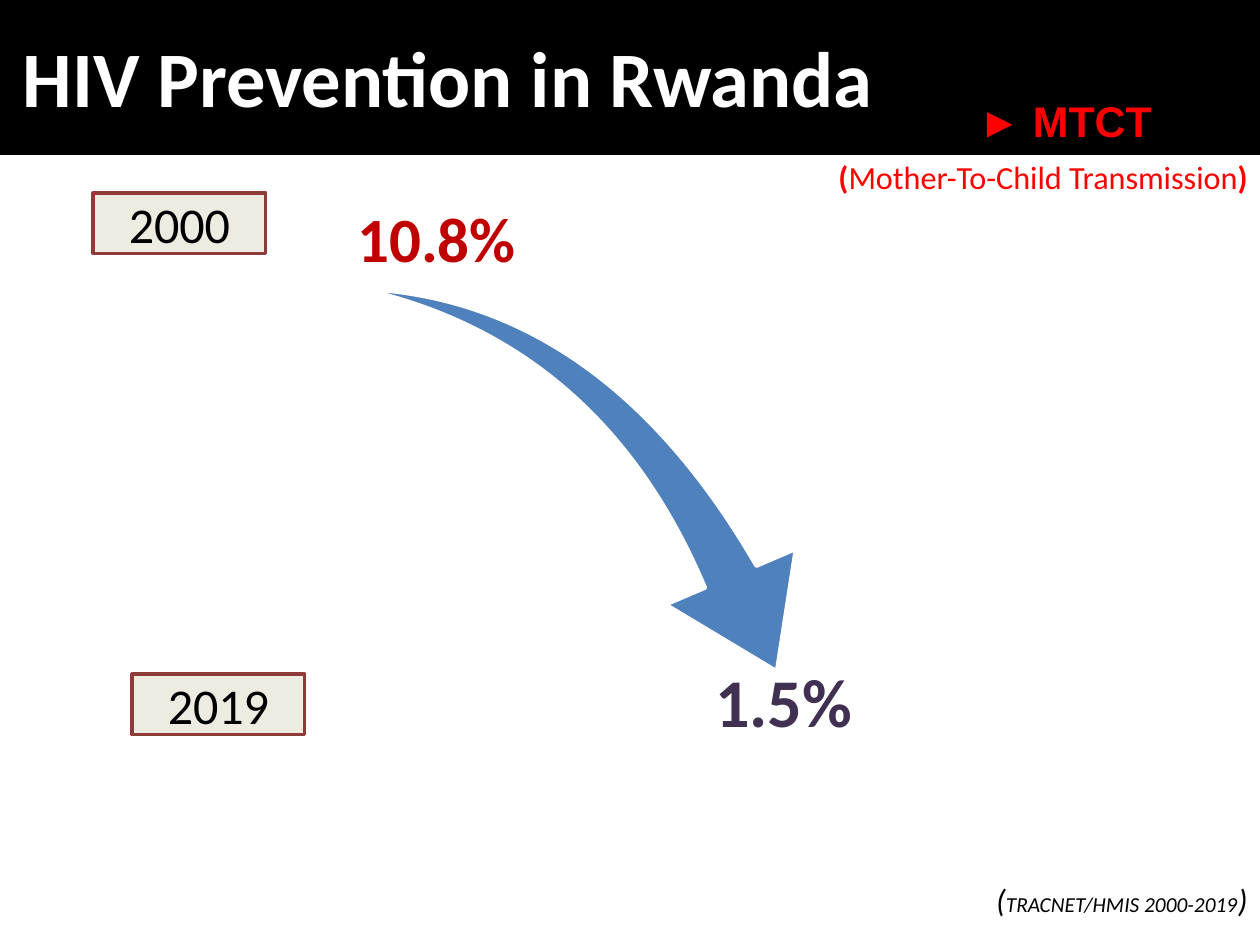
from pptx import Presentation
from pptx.dml.color import RGBColor
from pptx.enum.shapes import MSO_SHAPE
from pptx.enum.text import MSO_ANCHOR, MSO_AUTO_SIZE, PP_ALIGN
from pptx.util import Pt

BLACK = RGBColor(0x00, 0x00, 0x00)
WHITE = RGBColor(0xFF, 0xFF, 0xFF)
RED = RGBColor(0xFF, 0x00, 0x00)
DARK_RED = RGBColor(0xC0, 0x00, 0x00)
PURPLE = RGBColor(0x40, 0x31, 0x52)
BLUE = RGBColor(0x4F, 0x81, 0xBD)
TAN = RGBColor(0xEE, 0xEC, 0xE1)
MAROON = RGBColor(0x8E, 0x3B, 0x39)


def add_span(para, text, size, color=BLACK, font="Calibri", bold=False, italic=False):
    span = para.add_run()
    span.text = text
    span.font.name = font
    span.font.size = Pt(size)
    span.font.color.rgb = color
    span.font.bold = bold
    span.font.italic = italic


class SlideBuilder:
    def __init__(self, page):
        self.page = page

    def prepare(self, box, align, anchor, inset=None):
        """Set wrapping and placement of a box's text; return its first paragraph."""
        frame = box.text_frame
        frame.word_wrap = True
        frame.auto_size = MSO_AUTO_SIZE.NONE
        frame.vertical_anchor = anchor
        if inset is not None:
            frame.margin_left = frame.margin_right = Pt(inset)
            frame.margin_top = frame.margin_bottom = Pt(inset)
        para = frame.paragraphs[0]
        para.alignment = align
        return para

    def title(self, text, left, top, width, height):
        box = self.page.shapes.title
        box.left, box.top, box.width, box.height = map(Pt, (left, top, width, height))
        para = self.prepare(box, PP_ALIGN.LEFT, MSO_ANCHOR.TOP)
        add_span(para, text, 44.9, WHITE, bold=True)

    def text(self, left, top, width, height, spans, align=PP_ALIGN.LEFT,
             anchor=MSO_ANCHOR.TOP, inset=None, spacing=None):
        """Add a one-paragraph text box; spans are (text, format) pairs."""
        box = self.page.shapes.add_textbox(*map(Pt, (left, top, width, height)))
        para = self.prepare(box, align, anchor, inset)
        para.line_spacing = spacing
        for text, style in spans:
            add_span(para, text, **style)

    def shape(self, kind, left, top, width, height, fill, line):
        box = self.page.shapes.add_shape(kind, *map(Pt, (left, top, width, height)))
        box.shadow.inherit = False
        box.fill.solid()
        box.fill.fore_color.rgb = fill
        box.line.color.rgb = line
        box.line.width = Pt(2)
        return box

    def banner(self, width, height):
        """Add the band across the top, behind the title."""
        band = self.shape(MSO_SHAPE.RECTANGLE, 0, 0, width, height, BLACK, BLACK)
        self.page.shapes.title._element.addprevious(band._element)

    def year(self, text, left, top):
        box = self.shape(MSO_SHAPE.RECTANGLE, left, top, 98.6, 34.6, TAN, MAROON)
        para = self.prepare(box, PP_ALIGN.CENTER, MSO_ANCHOR.MIDDLE)
        add_span(para, text, 28.6)

    def rate(self, text, left, top, width, size, color, anchor):
        self.text(left, top, width, 51.1, [(text, dict(size=size, color=color, bold=True))],
                  PP_ALIGN.CENTER, anchor, inset=3.6, spacing=0.9)

    def swoosh(self, left, top, width, height, rotation):
        arrow = self.shape(MSO_SHAPE.SWOOSH_ARROW, left, top, width, height, BLUE, WHITE)
        arrow.rotation = rotation
        arrow.adjustments[0] = 0.163
        arrow.adjustments[1] = 0.314


def main():
    deck = Presentation()
    deck.slide_width, deck.slide_height = Pt(720), Pt(540)
    slide = SlideBuilder(deck.slides.add_slide(deck.slide_layouts[5]))

    slide.banner(720, 87.5)
    slide.title("HIV Prevention in Rwanda", 5.8, 13, 733, 62.6)
    slide.text(552.2, 50.4, 167.8, 37.4,
               [("► MTCT", dict(size=24.5, color=RED, font="Arial", bold=True))])

    red = dict(size=18.4, color=RED)
    bracket = dict(red, bold=True)
    slide.text(447.8, 86.4, 272.2, 30.2,
               [("(", bracket), ("Mother-To-Child Transmission", red), (")", bracket)],
               PP_ALIGN.RIGHT)

    slide.swoosh(202.3, 173.5, 276.5, 193, 73.3)
    slide.rate("10.8%", 184.3, 110.2, 130.3, 36, DARK_RED, MSO_ANCHOR.BOTTOM)
    slide.rate("1.5%", 360, 378.7, 175.7, 39, PURPLE, MSO_ANCHOR.TOP)
    slide.year("2000", 53.3, 110.2)
    slide.year("2019", 75.6, 385.2)

    bracket = dict(size=18.4, italic=True)
    slide.text(447.8, 499.7, 272.2, 30.2,
               [("(", bracket), ("TRACNET/HMIS 2000-2019", dict(size=12.2, italic=True)),
                (")", bracket)],
               PP_ALIGN.RIGHT)

    deck.save("out.pptx")


if __name__ == "__main__":
    main()
